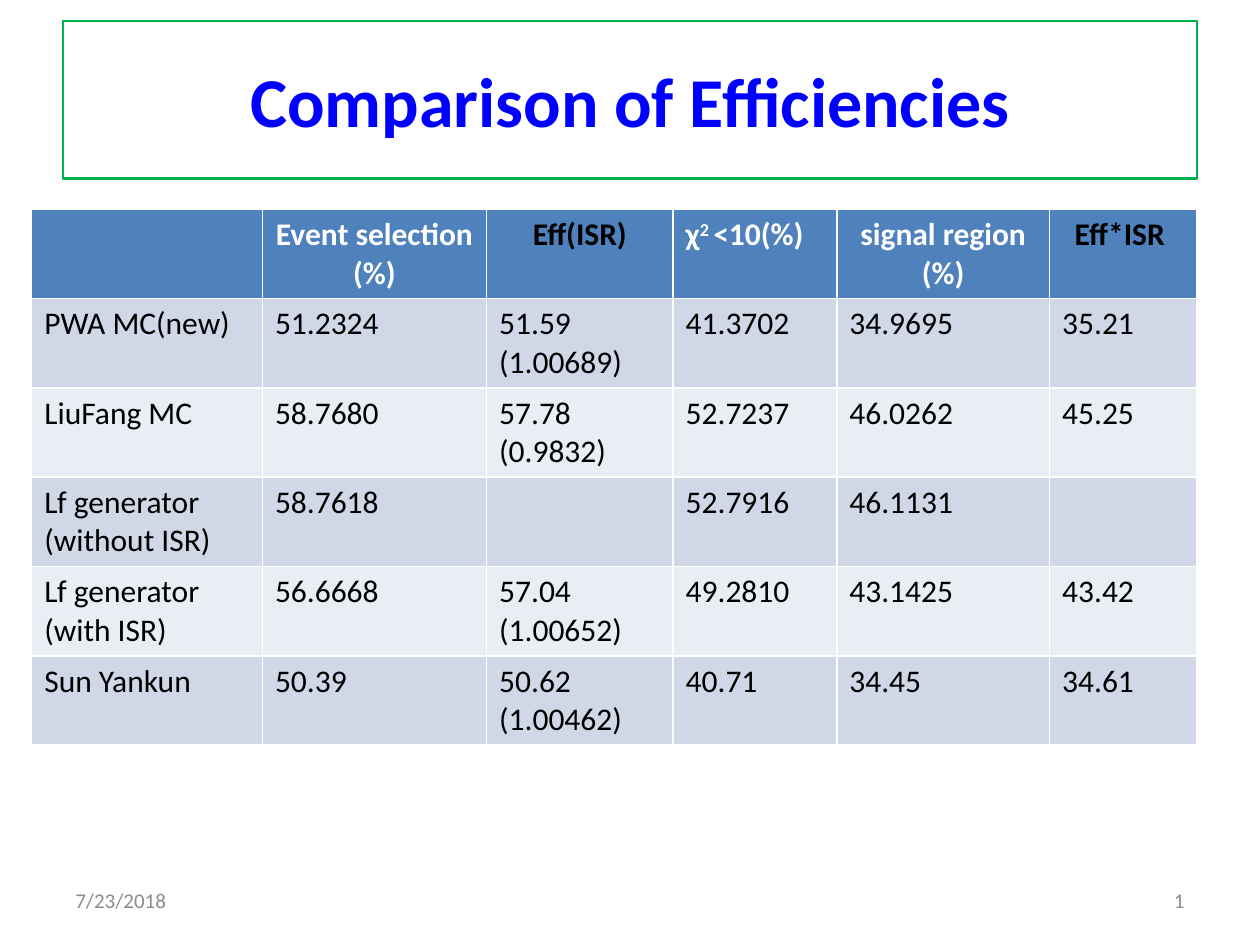
import pptx
import pptx.util
import pptx.dml.color
import pptx.enum.text

Cm = pptx.util.Cm
Pt = pptx.util.Pt
RGBColor = pptx.dml.color.RGBColor
ALIGN = pptx.enum.text.PP_ALIGN
MIDDLE = pptx.enum.text.MSO_ANCHOR.MIDDLE

WHITE = RGBColor(0xFF, 0xFF, 0xFF)
BLACK = RGBColor(0x00, 0x00, 0x00)
BLUE = RGBColor(0x00, 0x00, 0xFF)
GREEN = RGBColor(0x00, 0xB0, 0x50)
GRAY = RGBColor(0x8C, 0x8C, 0x8C)
HEAD = RGBColor(0x4F, 0x81, 0xBD)
BANDS = [RGBColor(0xD0, 0xD8, 0xE8), RGBColor(0xE9, 0xED, 0xF4)]

WIDTHS = [4.65, 4.52, 3.76, 3.3, 4.29, 2.97]
HEADS = [
    ("", WHITE, ALIGN.CENTER),
    ("Event selection (%)", WHITE, ALIGN.CENTER),
    ("Eff(ISR)", BLACK, ALIGN.CENTER),
    ("χ", WHITE, ALIGN.LEFT),
    ("signal region\n(%)", WHITE, ALIGN.CENTER),
    ("Eff*ISR ", BLACK, ALIGN.CENTER),
]
ROWS = [
    ["PWA MC(new)", "51.2324", "51.59\n(1.00689)", "41.3702", "34.9695", "35.21"],
    ["LiuFang MC", "58.7680", "57.78\n(0.9832)", "52.7237", "46.0262", "45.25"],
    ["Lf generator\n(without ISR)", "58.7618", "", "52.7916", "46.1131", ""],
    ["Lf generator\n(with ISR)", "56.6668", "57.04\n(1.00652)", "49.2810", "43.1425", "43.42"],
    ["Sun Yankun", "50.39", "50.62\n(1.00462)", "40.71", "34.45", "34.61"],
]


def write(frame, text, size, color, align=ALIGN.LEFT, bold=False):
    frame.text = text
    for para in frame.paragraphs:
        para.alignment = align
        font = para.font
        font.name = "Calibri"
        font.size = Pt(size)
        font.bold = bold
        font.color.rgb = color


def add_title(slide):
    title = slide.shapes.title
    title.left, title.top = Cm(1.27), Cm(0.42)
    title.width, title.height = Cm(22.86), Cm(3.18)
    title.line.color.rgb = GREEN
    title.line.width = Pt(1.25)
    title.text_frame.vertical_anchor = MIDDLE
    write(title.text_frame, "Comparison of Efficiencies", 40, BLUE, ALIGN.CENTER, True)


def fill_cell(cell, back, text, color, align=ALIGN.LEFT, bold=False):
    cell.fill.solid()
    cell.fill.fore_color.rgb = back
    write(cell.text_frame, text, 18, color, align, bold)


def add_grid(slide):
    count = len(ROWS) + 1
    frame = slide.shapes.add_table(
        count, len(WIDTHS), Cm(0.64), Cm(4.22), Cm(sum(WIDTHS)), Cm(1.8 * count))
    table = frame.table
    for col, width in zip(table.columns, WIDTHS):
        col.width = Cm(width)
    for col, (text, color, align) in enumerate(HEADS):
        fill_cell(table.cell(0, col), HEAD, text, color, align, True)
    for row, texts in enumerate(ROWS):
        for col, text in enumerate(texts):
            fill_cell(table.cell(row + 1, col), BANDS[row % 2], text, BLACK)
    chi = table.cell(0, 3).text_frame.paragraphs[0]
    power = chi.add_run()
    power.text = "2 "
    power.font._element.set("baseline", "30000")
    chi.add_run().text = "<10(%)"


def add_foot(slide, left, text, align):
    box = slide.shapes.add_textbox(Cm(left), Cm(17.65), Cm(5.93), Cm(1.01))
    box.text_frame.word_wrap = True
    box.text_frame.vertical_anchor = MIDDLE
    write(box.text_frame, text, 12, GRAY, align)


def main():
    deck = pptx.Presentation()
    deck.slide_width, deck.slide_height = Cm(25.4), Cm(19.05)
    slide = deck.slides.add_slide(deck.slide_layouts[5])
    add_foot(slide, 18.2, "1", ALIGN.RIGHT)
    add_foot(slide, 1.27, "7/23/2018", ALIGN.LEFT)
    add_title(slide)
    add_grid(slide)
    deck.save("out.pptx")


if __name__ == "__main__":
    main()
